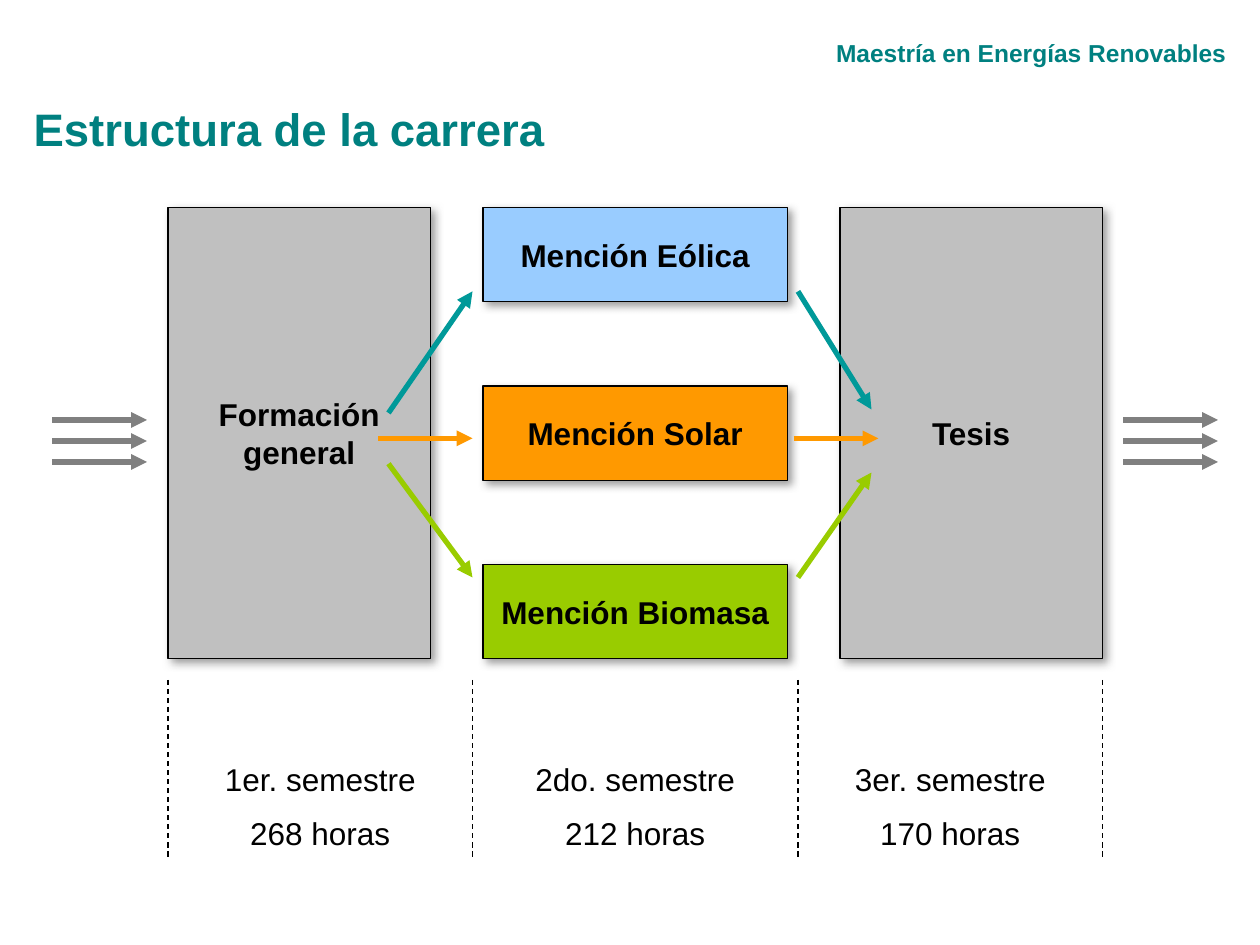
from lxml.etree import SubElement
from pptx import Presentation
from pptx.dml.color import RGBColor
from pptx.enum.dml import MSO_LINE
from pptx.enum.shapes import MSO_CONNECTOR, MSO_SHAPE
from pptx.enum.text import MSO_ANCHOR, MSO_AUTO_SIZE, PP_ALIGN
from pptx.oxml.ns import qn
from pptx.util import Pt

# Content
TITLE = "Estructura de la carrera"
PROGRAM = "Maestría en Energías Renovables"
STAGES = [  # lines, left
    (["Formación", "general"], 96),
    (["Tesis"], 480),
]
MENTIONS = [  # name, fill
    ("Mención Eólica", "99CCFF"),
    ("Mención Solar", "FF9900"),
    ("Mención Biomasa", "99CC00"),
]
SEMESTERS = [
    ["1er. semestre", "268 horas"],
    ["2do. semestre", "212 horas"],
    ["3er. semestre", "170 horas"],
]
BRANCHES = [  # colour, start and end of each arrow
    ("99CC00", (222, 265), (270, 330)),
    ("009999", (222, 236), (270, 166.5)),
    ("FF9900", (216, 250.5), (270, 250.5)),
    ("99CC00", (456, 330), (498, 270)),
    ("009999", (456, 166.5), (498, 234)),
    ("FF9900", (453.5, 250.5), (502, 250.5)),
]

# Layout, in points
TOP, STAGE_WIDTH, STAGE_HEIGHT = 118.5, 150, 258
MENTION_LEFT, MENTION_WIDTH, MENTION_HEIGHT, MENTION_STEP = 276, 174, 54, 102
DIVIDERS, DIVIDER_TOP, DIVIDER_BOTTOM = (96, 270, 456, 630), 388.5, 490.5
SEMESTER_LEFT, SEMESTER_STEP = 114, 180
FLOW_STARTS, FLOW_LENGTH, FLOW_TOP, FLOW_STEP = (30, 642), 54, 240, 12
TEAL, GRAY = "008080", "808080"


def color(value):
    return RGBColor.from_string(value)


def place(shape, left, top, width, height):
    shape.left, shape.top = Pt(left), Pt(top)
    shape.width, shape.height = Pt(width), Pt(height)


def write(shape, lines, size=18, ink="000000", bold=False,
          align=PP_ALIGN.CENTER, anchor=MSO_ANCHOR.TOP, wrap=True, gap=0):
    frame = shape.text_frame
    frame.auto_size = MSO_AUTO_SIZE.NONE
    frame.word_wrap, frame.vertical_anchor = wrap, anchor
    for index, line in enumerate(lines):
        para = frame.add_paragraph() if index else frame.paragraphs[0]
        para.alignment = align
        para.space_before = Pt(gap if index else 0)
        span = para.add_run()
        span.text = line
        span.font.name, span.font.size, span.font.bold = "Arial", Pt(size), bold
        span.font.color.rgb = color(ink)


def add_label(page, lines, left, top, width, height, **text_format):
    box = page.shapes.add_textbox(Pt(left), Pt(top), Pt(width), Pt(height))
    write(box, lines, **text_format)


def add_block(page, lines, left, top, width, height, fill):
    box = page.shapes.add_shape(
        MSO_SHAPE.RECTANGLE, Pt(left), Pt(top), Pt(width), Pt(height))
    box.fill.solid()
    box.fill.fore_color.rgb = color(fill)
    box.line.color.rgb = color("000000")
    box.line.width = Pt(0.75)
    write(box, lines, bold=True, anchor=MSO_ANCHOR.MIDDLE, wrap=False)
    # Soft shadow towards the lower right
    box.shadow.inherit = False
    effects = box._element.spPr.find(qn("a:effectLst"))
    shadow = SubElement(effects, qn("a:outerShdw"), blurRad=str(Pt(5)),
                        dist=str(Pt(3)), dir="2700000", algn="tl",
                        rotWithShape="0")
    shade = SubElement(shadow, qn("a:srgbClr"), val=GRAY)
    SubElement(shade, qn("a:alpha"), val="75000")


def add_line(page, start, end, ink, width, dash=None, arrow=False):
    line = page.shapes.add_connector(
        MSO_CONNECTOR.STRAIGHT, *(Pt(value) for value in (*start, *end)))
    line.line.color.rgb = color(ink)
    line.line.width = Pt(width)
    if dash:
        line.line.dash_style = dash
    if arrow:
        SubElement(line.line._get_or_add_ln(), qn("a:tailEnd"), type="triangle")
    SubElement(line._element.spPr, qn("a:effectLst"))


def main():
    deck = Presentation()
    deck.slide_width, deck.slide_height = Pt(720), Pt(540)
    page = deck.slides.add_slide(deck.slide_layouts[5])

    # Headings
    place(page.shapes.title, 12, 54, 384, 38)
    write(page.shapes.title, [TITLE], size=26, ink=TEAL, bold=True,
          align=PP_ALIGN.LEFT)
    add_label(page, [PROGRAM], 408, 18, 300, 24, size=14, ink=TEAL, bold=True,
              align=PP_ALIGN.RIGHT)

    # Stages and mentions
    for lines, left in STAGES:
        add_block(page, lines, left, TOP, STAGE_WIDTH, STAGE_HEIGHT, "C0C0C0")
    for row, (name, fill) in enumerate(MENTIONS):
        add_block(page, [name], MENTION_LEFT, TOP + row * MENTION_STEP,
                  MENTION_WIDTH, MENTION_HEIGHT, fill)

    # Semesters between dashed dividers
    for left in DIVIDERS:
        add_line(page, (left, DIVIDER_TOP), (left, DIVIDER_BOTTOM),
                 "000000", 0.75, dash=MSO_LINE.DASH)
    for column, lines in enumerate(SEMESTERS):
        add_label(page, lines, SEMESTER_LEFT + column * SEMESTER_STEP, 430.5,
                  138, 61, gap=9.5)

    # Arrows between blocks, then entry and exit flows
    for ink, start, end in BRANCHES:
        add_line(page, start, end, ink, 3, arrow=True)
    for left in FLOW_STARTS:
        for row in range(3):
            height = FLOW_TOP + row * FLOW_STEP
            add_line(page, (left, height), (left + FLOW_LENGTH, height),
                     GRAY, 3, arrow=True)

    deck.save("out.pptx")


if __name__ == "__main__":
    main()
